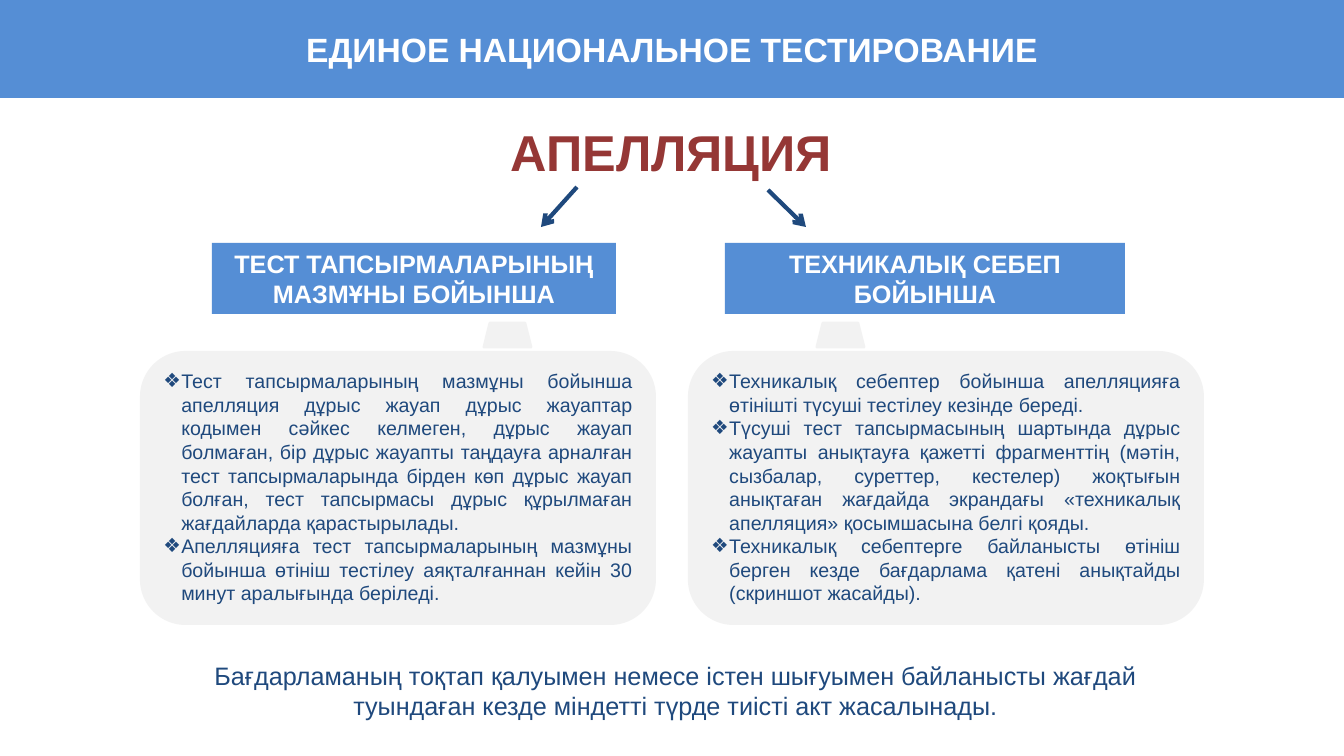
import pptx
import pptx.util
import pptx.dml.color
import pptx.enum.shapes
import pptx.enum.text
import pptx.oxml

WIDTH, HEIGHT = 1344, 756
EMU_PER_PX = 13.3333 * 914400 / WIDTH
BLUE, NAVY, RED, GREY, WHITE = "558ED5", "1F497D", "953735", "F2F2F2", "FFFFFF"

HEADER = "ЕДИНОЕ НАЦИОНАЛЬНОЕ ТЕСТИРОВАНИЕ"
TOPIC = "АПЕЛЛЯЦИЯ"
CONCLUSION = ("Бағдарламаның тоқтап қалуымен немесе істен шығуымен байланысты жағдай "
              "туындаған кезде міндетті түрде тиісті акт жасалынады.")
# Horizontal places are (left, width); arrows are (x1, y1, x2, y2)
GROUNDS = [
    {
        "heading": "ТЕСТ ТАПСЫРМАЛАРЫНЫҢ МАЗМҰНЫ БОЙЫНША",
        "details": [
            "Тест тапсырмаларының мазмұны бойынша апелляция дұрыс жауап дұрыс жауаптар "
            "кодымен сәйкес келмеген, дұрыс жауап болмаған, бір дұрыс жауапты таңдауға "
            "арналған тест тапсырмаларында бірден көп дұрыс жауап болған, тест тапсырмасы "
            "дұрыс құрылмаған жағдайларда қарастырылады.",
            "Апелляцияға тест тапсырмаларының мазмұны бойынша өтініш тестілеу "
            "аяқталғаннан кейін 30 минут аралығында беріледі.",
        ],
        "heading_place": (212, 404), "panel_left": 140, "tab_left": 484,
        "arrow": (577, 187, 541, 227),
    },
    {
        "heading": "ТЕХНИКАЛЫҚ СЕБЕП БОЙЫНША",
        "details": [
            "Техникалық себептер бойынша апелляцияға өтінішті түсуші тестілеу кезінде береді.",
            "Түсуші тест тапсырмасының шартында дұрыс жауапты анықтауға қажетті фрагменттің "
            "(мәтін, сызбалар, суреттер, кестелер) жоқтығын анықтаған жағдайда экрандағы "
            "«техникалық апелляция» қосымшасына белгі қояды.",
            "Техникалық себептерге байланысты өтініш берген кезде бағдарлама қатені "
            "анықтайды (скриншот жасайды).",
        ],
        "heading_place": (725, 400), "panel_left": 688, "tab_left": 817,
        "arrow": (768, 190, 806, 227),
    },
]

SHAPES = pptx.enum.shapes.MSO_SHAPE
ALIGN = pptx.enum.text.PP_ALIGN
ANCHOR = pptx.enum.text.MSO_ANCHOR


def px(length):
    return pptx.util.Emu(round(length * EMU_PER_PX))


def color(value):
    return pptx.dml.color.RGBColor.from_string(value)


def add_xml(parent, tag, **attributes):
    child = pptx.oxml.parse_xml(
        f'<a:{tag} xmlns:a="http://schemas.openxmlformats.org/drawingml/2006/main"/>')
    for name, value in attributes.items():
        child.set(name, value)
    parent.append(child)


def write(shape, *paragraphs, size, ink, bold=False, align=ALIGN.CENTER,
          anchor=ANCHOR.TOP, bullet=None):
    frame = shape.text_frame
    frame.word_wrap = True
    frame.auto_size = pptx.enum.text.MSO_AUTO_SIZE.NONE
    frame.vertical_anchor = anchor
    frame.text = "\n".join(paragraphs)
    for paragraph in frame.paragraphs:
        paragraph.alignment = align
        font = paragraph.runs[0].font
        font.name, font.size, font.bold = "Arial", pptx.util.Pt(size), bold
        font.color.rgb = color(ink)
        if bullet:
            properties = paragraph._p.get_or_add_pPr()
            properties.set("marL", str(px(18)))
            properties.set("indent", str(px(-18)))
            add_xml(properties, "buFont", typeface="Arial")
            add_xml(properties, "buChar", char=bullet)


def add_block(slide, kind, left, top, width, height, fill, outline=None):
    block = slide.shapes.add_shape(kind, px(left), px(top), px(width), px(height))
    block.shadow.inherit = False
    block.fill.solid()
    block.fill.fore_color.rgb = color(fill)
    if outline:
        block.line.color.rgb = color(outline)
        block.line.width = pptx.util.Pt(2)
    else:
        block.line.fill.background()
    return block


def add_label(slide, text, left, top, width, height, **text_format):
    label = slide.shapes.add_textbox(px(left), px(top), px(width), px(height))
    write(label, text, **text_format)


def add_arrow(slide, *ends):
    arrow = slide.shapes.add_connector(
        pptx.enum.shapes.MSO_CONNECTOR.STRAIGHT, *map(px, ends))
    arrow.line.color.rgb = color(NAVY)
    arrow.line.width = pptx.util.Pt(3)
    add_xml(arrow.line._get_or_add_ln(), "tailEnd", type="arrow")
    add_xml(arrow._element.spPr, "effectLst")


def add_header(slide):
    header = slide.shapes.title
    header.left, header.top, header.width, header.height = map(px, (0, 0, WIDTH, 98))
    header.fill.solid()
    header.fill.fore_color.rgb = color(BLUE)
    write(header, HEADER, size=24, ink=WHITE, bold=True, anchor=ANCHOR.MIDDLE)


def add_ground(slide, ground):
    """Draw one reason for appeal: arrow, heading, tab and detail panel."""
    panel = add_block(slide, SHAPES.ROUNDED_RECTANGLE,
                      ground["panel_left"], 351, 516, 274, GREY)
    write(panel, *ground["details"], size=14, ink=NAVY, align=ALIGN.JUSTIFY, bullet="❖")
    left, width = ground["heading_place"]
    heading = add_block(slide, SHAPES.RECTANGLE, left, 243, width, 71, BLUE)
    write(heading, ground["heading"], size=18, ink=WHITE, bold=True)
    add_arrow(slide, *ground["arrow"])
    add_block(slide, SHAPES.TRAPEZOID, ground["tab_left"], 323, 47, 24, GREY, outline=GREY)


def main():
    deck = pptx.Presentation()
    deck.slide_width, deck.slide_height = px(WIDTH), px(HEIGHT)
    slide = deck.slides.add_slide(deck.slide_layouts[5])
    add_header(slide)
    add_label(slide, TOPIC, 497, 116, 349, 71, size=36, ink=RED, bold=True)
    for ground in GROUNDS:
        add_ground(slide, ground)
    add_label(slide, CONCLUSION, 159, 655, 1033, 71, size=18, ink=NAVY)
    deck.save("out.pptx")


if __name__ == "__main__":
    main()
